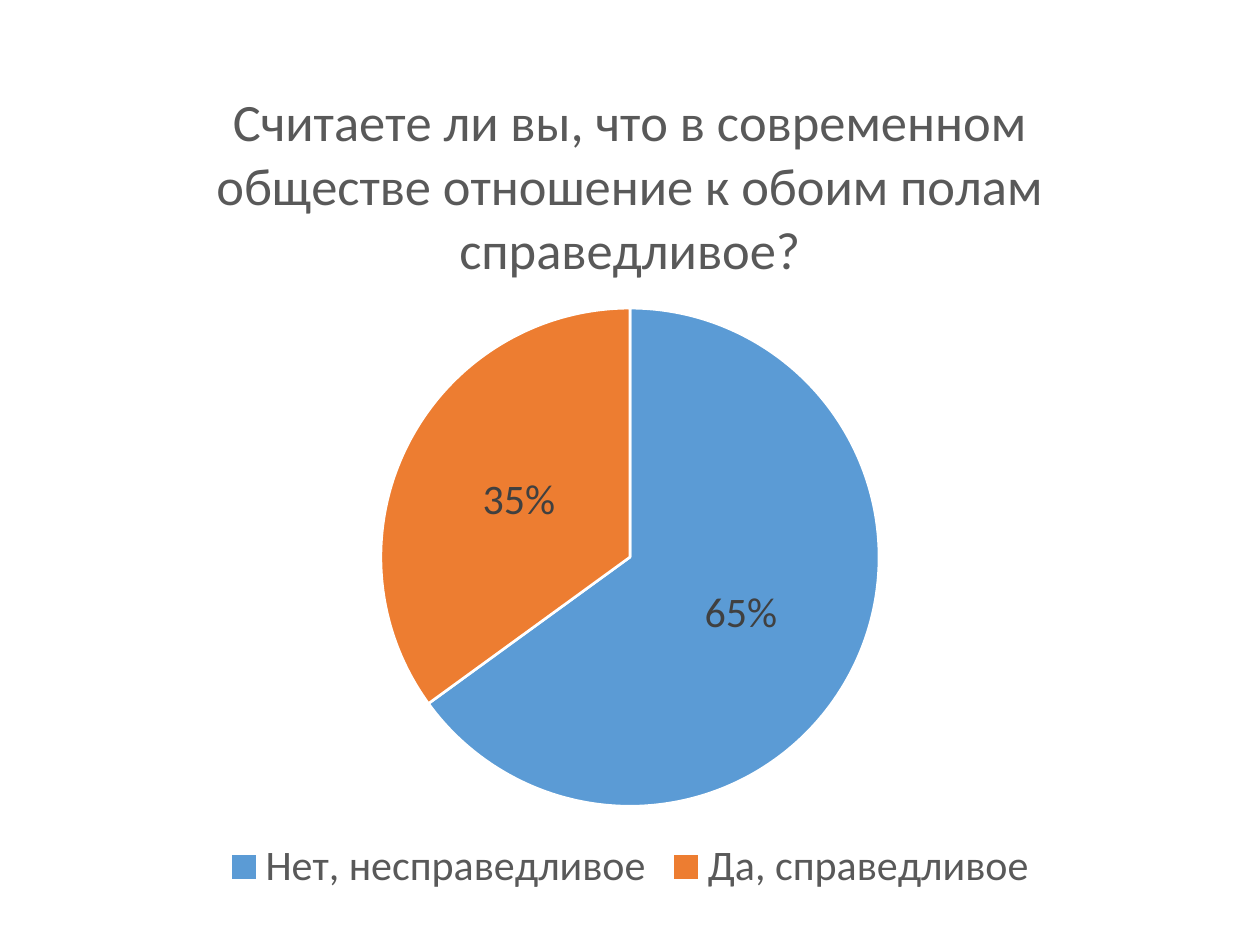
import dataclasses

import pptx
import pptx.chart.data
import pptx.dml.color
import pptx.enum.chart
import pptx.util

Pt = pptx.util.Pt
FACE = "Calibri"
TITLE = "Считаете ли вы, что в современном\nобществе отношение к обоим полам справедливое?"


@dataclasses.dataclass
class Slice:
    name: str
    value: int
    fill: str


SLICES = [
    Slice("Нет, несправедливое", 65, "5B9BD5"),
    Slice("Да, справедливое", 35, "ED7D31"),
]


def paint(color, code: str) -> None:
    color.rgb = pptx.dml.color.RGBColor.from_string(code)


def style(font, size: float, code: str) -> None:
    font.name = FACE
    font.size = Pt(size)
    font.bold = False
    paint(font.color, code)


def add_pie(slide, slices: list[Slice]):
    data = pptx.chart.data.CategoryChartData()
    data.categories = [part.name for part in slices]
    data.add_series(TITLE, [part.value for part in slices])
    kind = pptx.enum.chart.XL_CHART_TYPE.PIE
    frame = slide.shapes.add_chart(kind, Pt(6.5), Pt(35.3), Pt(707), Pt(479.5), data)
    chart = frame.chart
    style(chart.font, 10, "000000")
    plot = chart.plots[0]
    plot.vary_by_categories = True
    for i, part in enumerate(slices):
        shape = plot.series[0].points[i].format
        shape.fill.solid()
        paint(shape.fill.fore_color, part.fill)
        shape.line.width = Pt(1.5)
        paint(shape.line.color, "FFFFFF")
    return chart


def add_title(chart) -> None:
    chart.has_title = True
    chart.chart_title.include_in_layout = False
    text = chart.chart_title.text_frame
    text.text = TITLE
    for para in text.paragraphs:
        style(para.font, 30, "595959")
        for run in para.runs:
            style(run.font, 30, "595959")


def add_labels(chart) -> None:
    plot = chart.plots[0]
    plot.has_data_labels = True
    labels = plot.data_labels
    labels.show_percentage = True
    labels.show_value = False
    labels.number_format = "0%"
    labels.number_format_is_linked = False
    labels.position = pptx.enum.chart.XL_LABEL_POSITION.CENTER
    style(labels.font, 24, "404040")


def add_legend(chart) -> None:
    chart.has_legend = True
    chart.legend.position = pptx.enum.chart.XL_LEGEND_POSITION.BOTTOM
    chart.legend.include_in_layout = False
    style(chart.legend.font, 24, "595959")


def main() -> None:
    deck = pptx.Presentation()
    deck.slide_width, deck.slide_height = Pt(720), Pt(540)
    slide = deck.slides.add_slide(deck.slide_layouts[6])

    # Pie with its title, percentages and legend
    chart = add_pie(slide, SLICES)
    add_title(chart)
    add_labels(chart)
    add_legend(chart)

    deck.save("out.pptx")


if __name__ == "__main__":
    main()
